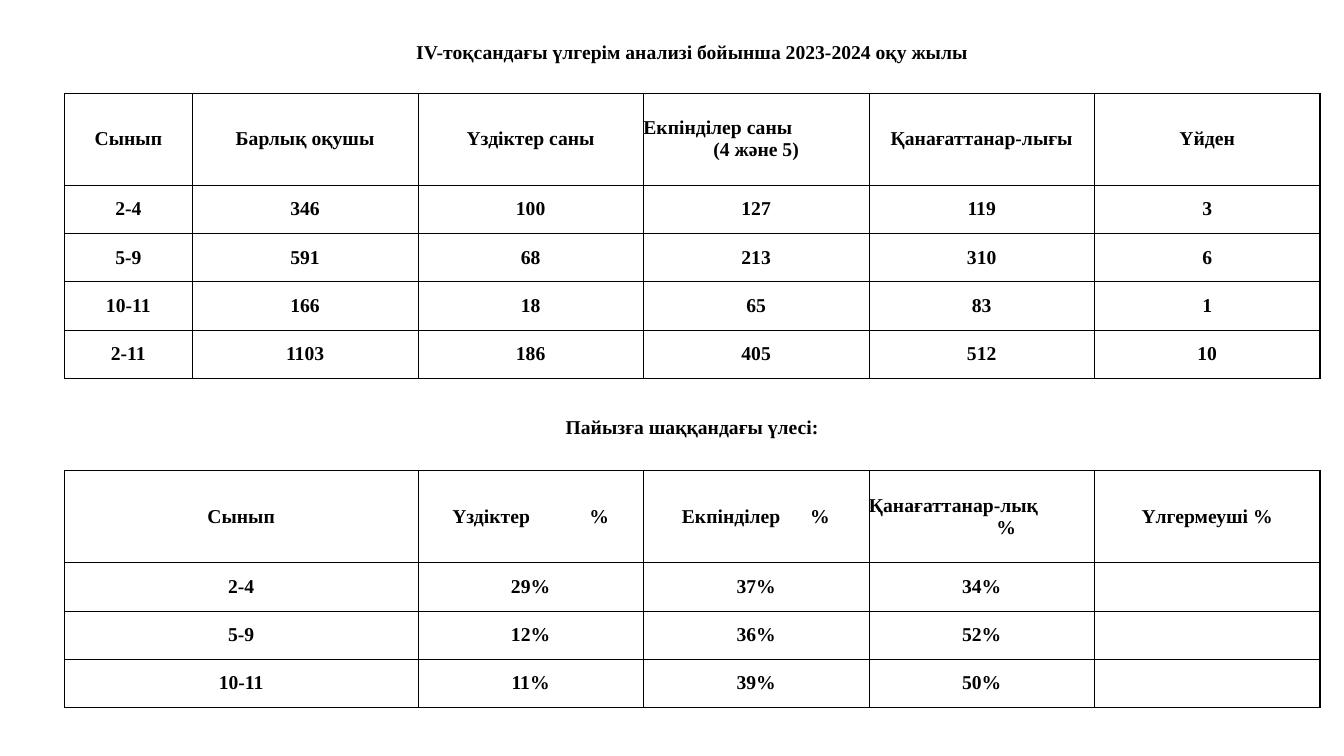
"""Build a slide with one table of quarter results by class and their shares in percent."""
from lxml.etree import SubElement as Sub
from pptx import Presentation as Deck
from pptx.dml.color import RGBColor as RGB
from pptx.enum.text import MSO_ANCHOR as Anchor, PP_ALIGN as Align
from pptx.oxml.ns import qn
from pptx.util import Pt

BLACK = RGB(0, 0, 0)
FONT = {"name": "Times New Roman", "size": Pt(14), "bold": True}
PLAIN = {"first_row": False, "horz_banding": False}
CELL = {"margin_left": 0, "margin_right": 0, "margin_top": 0, "margin_bottom": 0,
        "vertical_anchor": Anchor.MIDDLE}

WIDTHS = [91.4] + [161.1] * 5
HEIGHTS = [28, 15, 65.5] + [34.5] * 4 + [21.6, 21.6, 23, 65.5] + [34.5] * 3
GRID = {2, 3, 4, 5, 6, 10, 11, 12, 13}
SPANS = {0: 5, 8: 5, 10: 1, 11: 1, 12: 1, 13: 1}
ROWS = {
    0: ["ІV-тоқсандағы үлгерім анализі бойынша 2023-2024 оқу жылы"],
    2: ["Сынып", "Барлық оқушы", "Үздіктер саны", "Екпінділер саны\n(4 және 5)",
        "Қанағаттанар-лығы", "Үйден"],
    3: ["2-4", "346", "100", "127", "119", "3"],
    4: ["5-9", "591", "68", "213", "310", "6"],
    5: ["10-11", "166", "18", "65", "83", "1"],
    6: ["2-11", "1103", "186", "405", "512", "10"],
    8: ["Пайызға шаққандағы үлесі:"],
    10: ["Сынып", "", "Үздіктер\t%", "Екпінділер\t%", "Қанағаттанар-лық\n%", "Үлгермеуші %"],
    11: ["2-4", "", "29%", "37%", "34%"],
    12: ["5-9", "", "12%", "36%", "52%"],
    13: ["10-11", "", "11%", "39%", "50%"],
}
TABS = {(10, 2): (24.6, 98), (10, 3): (27.5, 91.5)}


def style(item, values):
    for name, value in values.items():
        setattr(item, name, value)


def edge(cell, side, width):
    line = Sub(cell._tc.get_or_add_tcPr(), qn(f"a:ln{side}"), w=str(Pt(width)))
    if width:
        fill = Sub(line, qn("a:solidFill"))
        Sub(fill, qn("a:srgbClr"), val=str(BLACK))
    else:
        Sub(line, qn("a:noFill"))


deck = Deck()
style(deck, {"slide_width": Pt(960), "slide_height": Pt(540)})
slide = deck.slides.add_slide(deck.slide_layouts[6])
frame = slide.shapes.add_table(len(HEIGHTS), len(WIDTHS), Pt(46), Pt(23.7),
                               Pt(sum(WIDTHS)), Pt(sum(HEIGHTS)))
table = frame.table
style(table, PLAIN)
for col, width in zip(table.columns, WIDTHS):
    col.width = Pt(width)
for row, height in zip(table.rows, HEIGHTS):
    row.height = Pt(height)

last = len(WIDTHS) - 1
for r in range(len(HEIGHTS)):
    texts = ROWS.get(r, [])
    inner = r in GRID
    for c in range(len(WIDTHS)):
        cell = table.cell(r, c)
        style(cell, CELL)
        edge(cell, "L", (1 if c == 0 else 0.5) if inner else 0)
        edge(cell, "R", (1 if c == last else 0.5) if inner else 0)
        for side, near in (("T", r - 1), ("B", r + 1)):
            edge(cell, side, (0, 1, 0.5)[inner + (near in GRID)])
        cell.fill.background()

        text = texts[c] if c < len(texts) else ""
        if not text:
            Sub(cell.text_frame.paragraphs[0]._p, qn("a:endParaRPr"), sz="1000")
            continue
        cell.text = text.replace("\v", "\n")
        for para in cell.text_frame.paragraphs:
            para.alignment = Align.CENTER
            for run in para.runs:
                style(run.font, FONT)
                run.font.color.rgb = BLACK
        if "\n" in text:
            cell.text_frame.paragraphs[0].alignment = Align.LEFT
        if (r, c) in TABS:
            start, stop = TABS[r, c]
            cell.margin_left = Pt(start)
            para = cell.text_frame.paragraphs[0]
            para.alignment = Align.LEFT
            tabs = Sub(para._p.get_or_add_pPr(), qn("a:tabLst"))
            Sub(tabs, qn("a:tab"), pos=str(Pt(stop)), algn="l")

share = table.cell(10, 4).text_frame.paragraphs[1]
share.alignment = Align.LEFT
share._p.get_or_add_pPr().set("marL", str(Pt(91)))
table.cell(8, 0).vertical_anchor = Anchor.BOTTOM
for r, end in SPANS.items():
    table.cell(r, 0).merge(table.cell(r, end))

deck.save("out.pptx")
